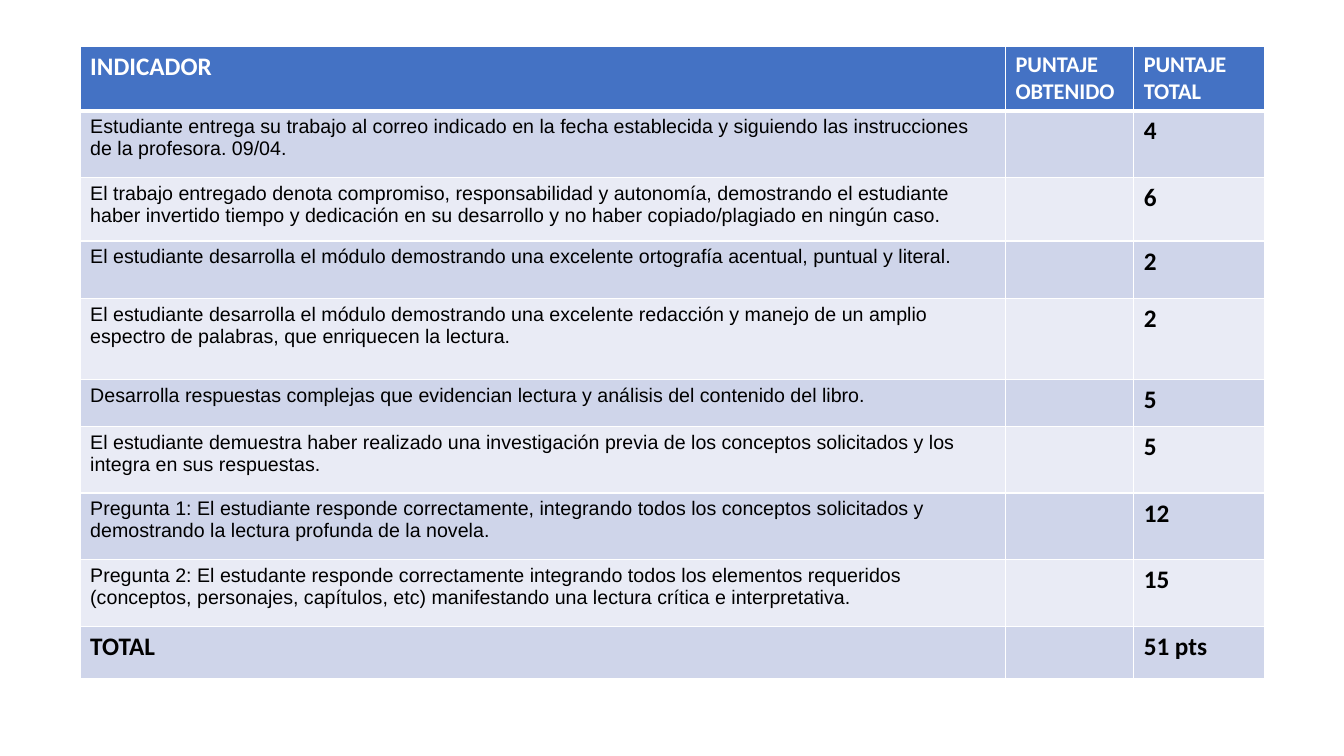
from lxml.etree import SubElement
from pptx import Presentation
from pptx.dml.color import RGBColor
from pptx.oxml.ns import qn
from pptx.util import Cm, Pt

WHITE, BLACK, BLUE = "FFFFFF", "000000", "4472C4"
BANDS = ["CFD5EA", "E9EBF5"]
HEADERS = [("INDICADOR", 18), ("PUNTAJE OBTENIDO", 16), ("PUNTAJE TOTAL", 16)]
INDICATORS = [
    ("Estudiante entrega su trabajo al correo indicado en la fecha establecida y siguiendo "
     "las instrucciones de la profesora. 09/04.", 4, 1.68),
    ("El trabajo entregado denota compromiso, responsabilidad y autonomía, demostrando el "
     "estudiante haber invertido tiempo y dedicación en su desarrollo y no haber "
     "copiado/plagiado en ningún caso.", 6, 1.6),
    ("El estudiante desarrolla el módulo demostrando una excelente ortografía acentual, "
     "puntual y literal.", 2, 1.45),
    ("El estudiante desarrolla el módulo demostrando una excelente redacción y manejo de un "
     "amplio espectro de palabras, que enriquecen la lectura.", 2, 2.03),
    ("Desarrolla respuestas complejas que evidencian lectura y análisis del contenido del "
     "libro.", 5, 1.19),
    ("El estudiante demuestra haber realizado una investigación previa de los conceptos "
     "solicitados y los integra en sus respuestas.", 5, 1.68),
    ("Pregunta 1: El estudiante responde correctamente, integrando todos los conceptos "
     "solicitados y demostrando la lectura profunda de la novela.", 12, 1.68),
    ("Pregunta 2: El estudante responde correctamente integrando todos los elementos "
     "requeridos (conceptos, personajes, capítulos, etc) manifestando una lectura crítica e "
     "interpretativa.", 15, 1.68),
]
HEADER_HEIGHT, TOTAL_HEIGHT = 1.6, 1.32
COLUMN_WIDTHS = [23.32, 3.23, 3.3]


def color(value):
    return RGBColor.from_string(value)


class RubricSlide:
    heading_font = "Calibri"
    body_font = "Arial"

    def __init__(self, presentation):
        self.slide = presentation.slides.add_slide(presentation.slide_layouts[6])

    def table(self, left, top, widths, heights):
        grid = self.slide.shapes.add_table(
            len(heights), len(widths), Cm(left), Cm(top), Cm(sum(widths)), Cm(sum(heights))
        ).table
        for column, width in zip(grid.columns, widths):
            column.width = Cm(width)
        for row, height in zip(grid.rows, heights):
            row.height = Cm(height)
        return grid

    def borders(self, cell, top, bottom):
        properties = cell._tc.get_or_add_tcPr()
        for side, width in {"L": 1, "R": 1, "T": top, "B": bottom}.items():
            line = SubElement(properties, qn(f"a:ln{side}"), w=str(Pt(width)))
            SubElement(SubElement(line, qn("a:solidFill")), qn("a:srgbClr"), val=WHITE)

    def cell(self, cell, fill, top=1, bottom=1):
        self.borders(cell, top, bottom)
        cell.fill.solid()
        cell.fill.fore_color.rgb = color(fill)

    def text(self, cell, wording, size=18, bold=True, ink=BLACK):
        cell.text = wording
        font = cell.text_frame.paragraphs[0].font
        font.name = self.heading_font if bold else self.body_font
        font.size = Pt(size)
        font.bold = bold
        font.color.rgb = color(ink)


def main():
    presentation = Presentation()
    presentation.slide_width, presentation.slide_height = Cm(33.87), Cm(19.05)
    page = RubricSlide(presentation)
    heights = [HEADER_HEIGHT, *(height for _, _, height in INDICATORS), TOTAL_HEIGHT]
    rubric = page.table(2.02, 1.16, COLUMN_WIDTHS, heights)

    for column, (heading, size) in enumerate(HEADERS):
        header = rubric.cell(0, column)
        page.cell(header, BLUE, bottom=3)
        page.text(header, heading, size, ink=WHITE)

    for row in range(1, len(heights)):
        for column in range(len(COLUMN_WIDTHS)):
            page.cell(rubric.cell(row, column), BANDS[(row - 1) % 2], top=3 if row == 1 else 1)

    for row, (indicator, points, _) in enumerate(INDICATORS, 1):
        page.text(rubric.cell(row, 0), indicator, 14, bold=False)
        page.text(rubric.cell(row, 2), str(points))

    total_row = len(heights) - 1
    total = sum(points for _, points, _ in INDICATORS)
    page.text(rubric.cell(total_row, 0), "TOTAL")
    page.text(rubric.cell(total_row, 2), f"{total} pts")
    presentation.save("out.pptx")


if __name__ == "__main__":
    main()
